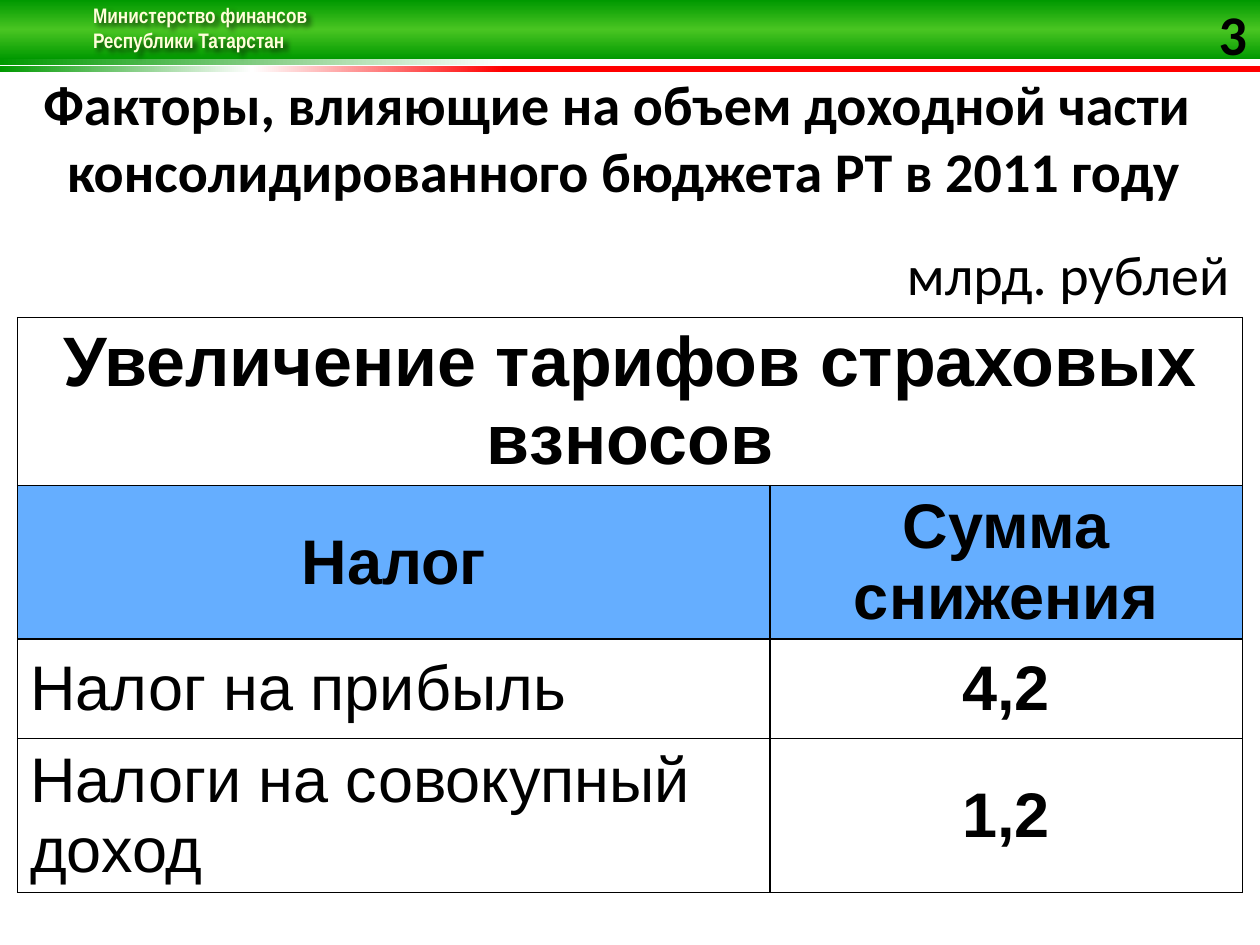
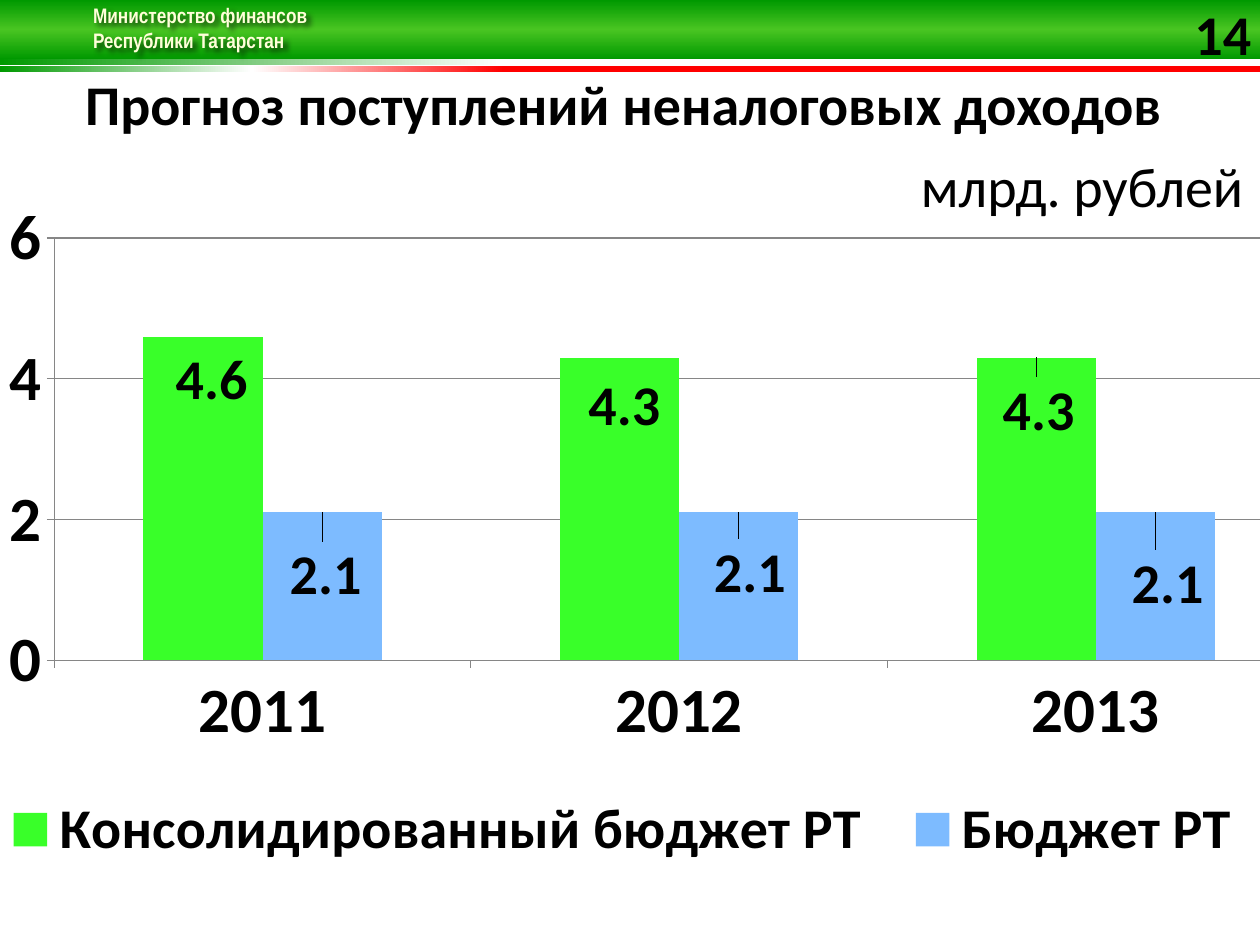
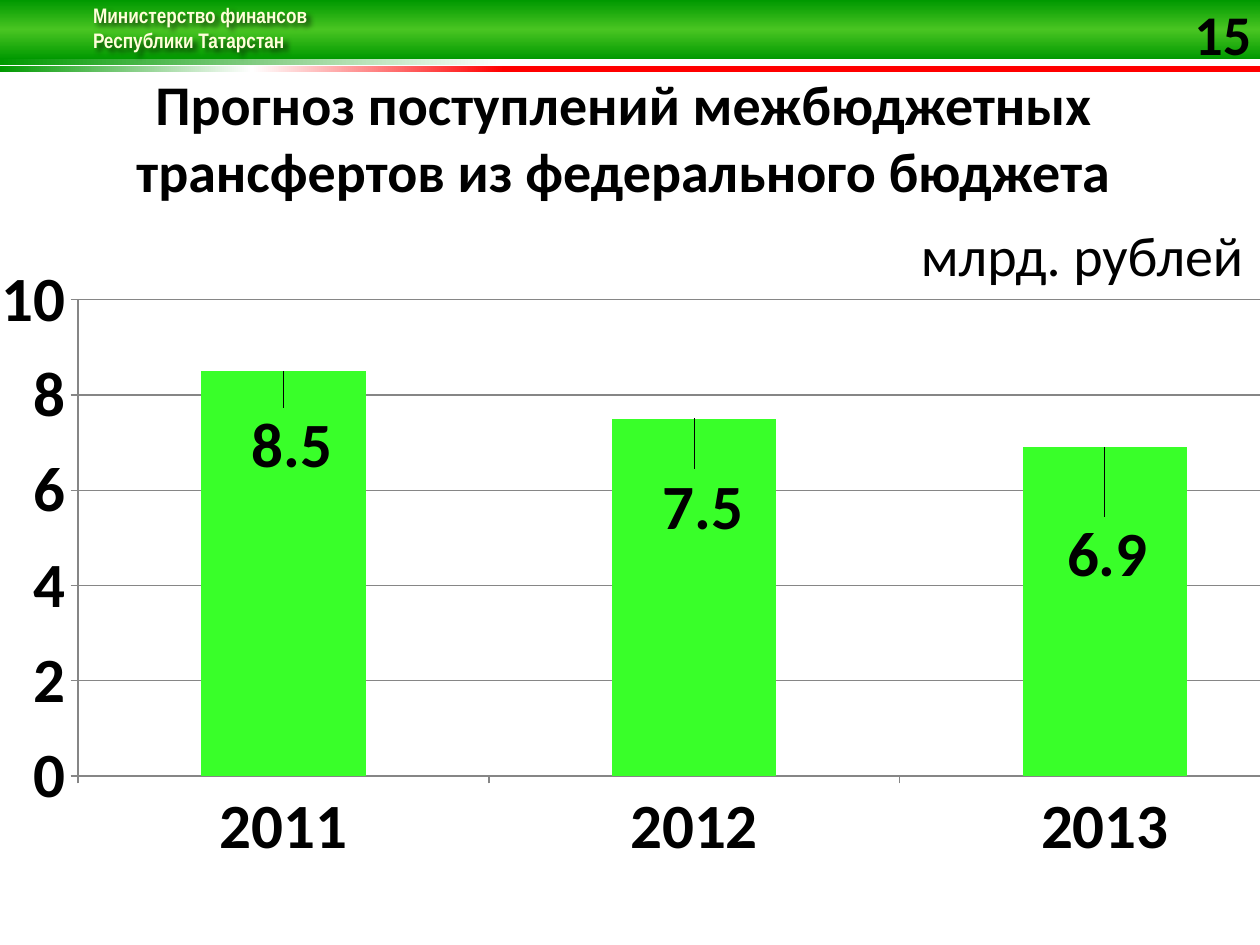
from lxml import etree
from pptx import Presentation
from pptx.chart.data import CategoryChartData
from pptx.dml.color import RGBColor
from pptx.enum.chart import XL_CHART_TYPE as ChartType
from pptx.enum.chart import XL_LABEL_POSITION as LabelPosition
from pptx.enum.chart import XL_LEGEND_POSITION as LegendPosition
from pptx.enum.chart import XL_TICK_MARK as TickMark
from pptx.enum.shapes import MSO_SHAPE as ShapeKind
from pptx.enum.text import MSO_ANCHOR as Anchor
from pptx.enum.text import PP_ALIGN as Align
from pptx.oxml import parse_xml
from pptx.oxml.ns import nsdecls, qn
from pptx.util import Inches, Pt

COLORS = {
    "black": "000000",
    "white": "FFFFFF",
    "cream": "FFFFD9",
    "green": "009900",
    "light green": "49C522",
    "red": "FF0000",
    "header blue": "65AEFF",
    "bar green": "39FF29",
    "bar blue": "7DBBFF",
    "axis gray": "868686",
}
# top, height, angle, gradient stops
BANDS = [
    (0.47, 0.05, 180, [(0, "white"), (60, "white"), (100, "green")]),
    (0.52, 0.05, 180, [(60, "red"), (80, "white"), (100, "green")]),
    (0, 0.47, 90, [(0, "green"), (50, "light green"), (100, "green")]),
]
TITLE_FONT = {"name": "Calibri", "size": Pt(32), "bold": True}
UNIT_FONT = {"name": "Calibri", "size": Pt(32), "bold": False}
MINISTRY_FONT = {"name": "Arial Narrow", "size": Pt(12), "bold": True}
AXIS_FONT = {"name": "Calibri", "size": Pt(36), "bold": True}
UNIT = "млрд. рублей"
YEARS = ["2011", "2012", "2013"]


def rgb(color):
    return RGBColor.from_string(COLORS[color])


def set_font(font, values, color="black"):
    for name, value in values.items():
        setattr(font, name, value)
    font.color.rgb = rgb(color)


def add_text(slide, place, text, values, color="black", align=Align.LEFT,
             margins=(0.1, 0.05, 0.1, 0.05), wrap=True):
    """Add a text box; margins run left, top, right, bottom in inches."""
    box = slide.shapes.add_textbox(*map(Inches, place))
    frame = box.text_frame
    frame.word_wrap = wrap
    for side, margin in zip(("left", "top", "right", "bottom"), margins):
        setattr(frame, f"margin_{side}", Inches(margin))
    para = frame.paragraphs[0]
    para.alignment = align
    para.text = text
    for span in para.runs:
        set_font(span.font, values, color)
    return box


def add_band(slide, top, height, angle, stops):
    band = slide.shapes.add_shape(
        ShapeKind.RECTANGLE, 0, Inches(top), Inches(10), Inches(height))
    band.shadow.inherit = False
    band.line.fill.background()
    band.fill.gradient()
    band.fill.gradient_angle = 0
    gradient = band.fill._xPr.find(qn("a:gradFill"))
    gradient.find(qn("a:lin")).set("ang", str(angle * 60000))
    stop_list = gradient.find(qn("a:gsLst"))
    stop_list.clear()
    for position, color in stops:
        stop = etree.SubElement(stop_list, qn("a:gs"), pos=str(position * 1000))
        etree.SubElement(stop, qn("a:srgbClr"), val=COLORS[color])


def add_text_shadow(box):
    """Give an unfilled box a shadow, which falls from its letters."""
    box._element.spPr.append(parse_xml(
        f'<a:effectLst {nsdecls("a")}>'
        '<a:outerShdw blurRad="38100" dist="38100" dir="2700000" algn="tl">'
        f'<a:srgbClr val="{COLORS["black"]}"><a:alpha val="60000"/></a:srgbClr>'
        '</a:outerShdw></a:effectLst>'))


def add_page(deck, title, title_height, number, number_width):
    """Add a slide with the green header, the ministry, a title and a number."""
    slide = deck.slides.add_slide(deck.slide_layouts[6])
    for band in BANDS:
        add_band(slide, *band)
    ministry = add_text(slide, (0.64, -0.03, 1.92, 0.71),
                        "Министерство финансов\vРеспублики Татарстан",
                        MINISTRY_FONT, "cream")
    add_text_shadow(ministry)
    add_text(slide, (0, 0.55, 10, title_height), title, TITLE_FONT,
             align=Align.CENTER, margins=(0, 0, 0.1, 0.05))
    add_text(slide, (10 - number_width, 0, number_width, 0.54), str(number),
             TITLE_FONT, align=Align.CENTER, margins=(0, 0, 0, 0))
    return slide


def add_unit(slide, top):
    add_text(slide, (7.21, top, 2.79, 0.64), UNIT, UNIT_FONT, wrap=False)


def set_borders(cell, sides):
    properties = cell._tc.get_or_add_tcPr()
    for index, side in enumerate(sides):
        properties.insert(index, parse_xml(
            f'<a:ln{side} {nsdecls("a")} w="12700"><a:solidFill>'
            f'<a:srgbClr val="{COLORS["black"]}"/></a:solidFill></a:ln{side}>'))


def fill_cell(cell, text, size, bold, align, font="Arial", fill=None):
    cell.vertical_anchor = Anchor.MIDDLE
    cell.margin_top = cell.margin_bottom = 0
    if fill:
        cell.fill.solid()
        cell.fill.fore_color.rgb = rgb(fill)
    else:
        cell.fill.background()
    para = cell.text_frame.paragraphs[0]
    para.text = text
    para.alignment = align
    for span in para.runs:
        set_font(span.font, {"name": font, "size": Pt(size), "bold": bold})


def add_tax_table(slide, heading, header, taxes):
    widths = (5.97, 3.75)
    heights = (0.65, 1.33, 1.22, 0.79, 1.22)
    table = slide.shapes.add_table(
        len(heights), len(widths), Inches(0.14), Inches(1.87),
        Inches(sum(widths)), Inches(sum(heights))).table
    table.first_row = table.horz_banding = False
    for column, width in zip(table.columns, widths):
        column.width = Inches(width)
    for row, height in zip(table.rows, heights):
        row.height = Inches(height)
    for row in (0, 1):
        table.cell(row, 0).merge(table.cell(row, 1))
    fill_cell(table.cell(0, 0), UNIT, 32, False, Align.RIGHT, font="Calibri")
    fill_cell(table.cell(1, 0), heading, 40, True, Align.CENTER)
    for column, text in enumerate(header):
        fill_cell(table.cell(2, column), text, 36, True, Align.CENTER,
                  fill="header blue")
    for row, (tax, amount) in enumerate(taxes, start=3):
        fill_cell(table.cell(row, 0), tax, 36, False, Align.LEFT)
        fill_cell(table.cell(row, 1), amount, 36, True, Align.CENTER)
    for row in range(len(heights)):
        for column in range(len(widths)):
            set_borders(table.cell(row, column), "LRTB" if row else "B")


def make_layout(chart_size, offset, size=None, inner=False):
    """Turn inches within the chart into a manual layout element."""
    values = {"layoutTarget": "inner"} if inner else {}
    if size:
        values |= {"xMode": "edge", "yMode": "edge"}
    lengths = zip("xywh", (*offset, *(size or ())), chart_size * 2)
    values |= {name: length / whole for name, length, whole in lengths}
    layout = etree.Element(qn("c:layout"))
    manual = etree.SubElement(layout, qn("c:manualLayout"))
    for name, value in values.items():
        etree.SubElement(manual, qn(f"c:{name}"), val=str(value))
    return layout


def replace_layout(parent, layout, before):
    for old in parent.findall(qn("c:layout")):
        parent.remove(old)
    parent.insert(before, layout)


def style_axis(axis):
    axis.major_tick_mark = TickMark.OUTSIDE
    axis.minor_tick_mark = TickMark.NONE
    axis.format.line.color.rgb = rgb("axis gray")
    set_font(axis.tick_labels.font, AXIS_FONT)


def hide_leader_lines(labels):
    labels.append(parse_xml(
        f'<c:extLst {nsdecls("c")}>'
        '<c:ext uri="{CE6537A1-D6FC-4f65-9D91-7224C49458BB}" xmlns:c15='
        '"http://schemas.microsoft.com/office/drawing/2012/chart">'
        '<c15:showLeaderLines val="0"/></c:ext></c:extLst>'))


def style_series(series, color, chart_size, label_size, shifts):
    """Colour the bars and move each label from its bar's end by its shift."""
    series.format.fill.solid()
    series.format.fill.fore_color.rgb = rgb(color)
    series.invert_if_negative = False
    label_font = AXIS_FONT | {"size": Pt(label_size)}
    series.data_labels.show_value = True
    set_font(series.data_labels.font, label_font)
    for index in range(len(shifts)):
        label = series.points[index].data_label
        set_font(label.font, label_font)
        label.position = LabelPosition.OUTSIDE_END
    labels = series._element.find(qn("c:dLbls"))
    for label, shift in zip(labels.findall(qn("c:dLbl")), shifts):
        replace_layout(label, make_layout(chart_size, shift), 1)
    hide_leader_lines(labels)


def add_column_chart(slide, place, plot, top_value, label_size, bars):
    """Add a column chart; bars hold name, colour, values and label shifts."""
    chart_size = place[2:]
    data = CategoryChartData()
    data.categories = YEARS
    for name, _, values, _ in bars:
        data.add_series(name, values)
    chart = slide.shapes.add_chart(
        ChartType.COLUMN_CLUSTERED, *map(Inches, place), data).chart
    chart.has_title = False
    chart.has_legend = False
    set_font(chart.font, {"name": "Calibri", "size": Pt(18)})
    style_axis(chart.category_axis)
    values_axis = chart.value_axis
    style_axis(values_axis)
    values_axis.minimum_scale = 0
    values_axis.maximum_scale = top_value
    values_axis.major_unit = 2
    values_axis.tick_labels.number_format = "0"
    values_axis.tick_labels.number_format_is_linked = False
    values_axis.major_gridlines.format.line.color.rgb = rgb("axis gray")
    columns = chart.plots[0]
    columns.gap_width = 150
    columns.overlap = 0
    columns.vary_by_categories = False
    for series, (_, color, _, shifts) in zip(columns.series, bars):
        style_series(series, color, chart_size, label_size, shifts)
    plot_area = chart._chartSpace.chart.plotArea
    replace_layout(plot_area,
                   make_layout(chart_size, plot[:2], plot[2:], inner=True), 0)
    return chart


def add_legend(chart, chart_size, offset, size):
    chart.has_legend = True
    legend = chart.legend
    legend.position = LegendPosition.BOTTOM
    legend.include_in_layout = False
    set_font(legend.font, TITLE_FONT)
    replace_layout(legend._element, make_layout(chart_size, offset, size), 1)


def main():
    deck = Presentation()
    deck.slide_width, deck.slide_height = Inches(10), Inches(7.5)

    factors = add_page(
        deck, "Факторы, влияющие на объем доходной части \v"
        "консолидированного бюджета РТ в 2011 году", 1.16, 3, 0.43)
    add_tax_table(
        factors, "Увеличение тарифов страховых взносов",
        ("Налог", "Сумма снижения"),
        [("Налог на прибыль", "4,2"), ("Налоги на совокупный доход", "1,2")])

    non_tax = add_page(
        deck, "Прогноз поступлений неналоговых доходов", 0.68, 14, 0.59)
    place = (-0.51, 1.15, 11.14, 6.14)
    chart = add_column_chart(
        non_tax, place, (0.94, 0.74, 9.92, 3.35), 6, 32,
        [("Консолидированный бюджет РТ", "bar green", (4.6, 4.3, 4.3),
          [(0.07, 0.66), (0.04, 0.7), (0.02, 0.74)]),
         ("Бюджет РТ", "bar blue", (2.1, 2.1, 2.1),
          [(0.03, 0.82), (0.09, 0.8), (0.1, 0.89)])])
    add_legend(chart, place[2:], (0.34, 5.06), (10.22, 0.75))
    add_unit(non_tax, 1.15)

    transfers = add_page(
        deck, "Прогноз поступлений межбюджетных трансфертов "
        "из федерального бюджета", 1.23, 15, 0.59)
    add_column_chart(
        transfers, (-0.43, 1.91, 10.98, 5.59), (1.05, 0.47, 9.78, 3.78), 10, 36,
        [("Series 1", "bar green", (8.5, 7.5, 6.9),
          [(0.07, 0.94), (0.07, 1.05), (0.02, 1.2)])])
    add_unit(transfers, 1.7)

    deck.save("out.pptx")


if __name__ == "__main__":
    main()
